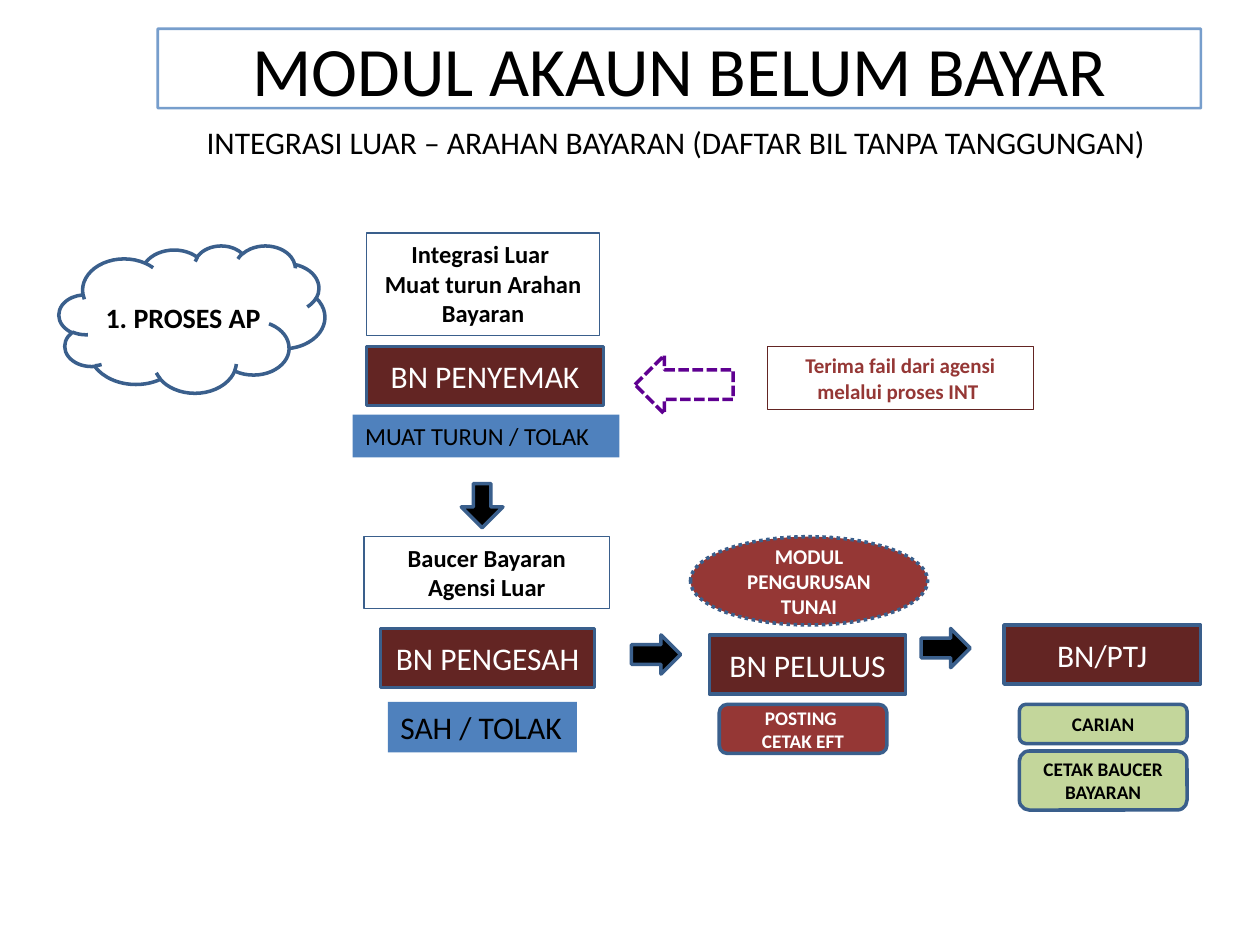
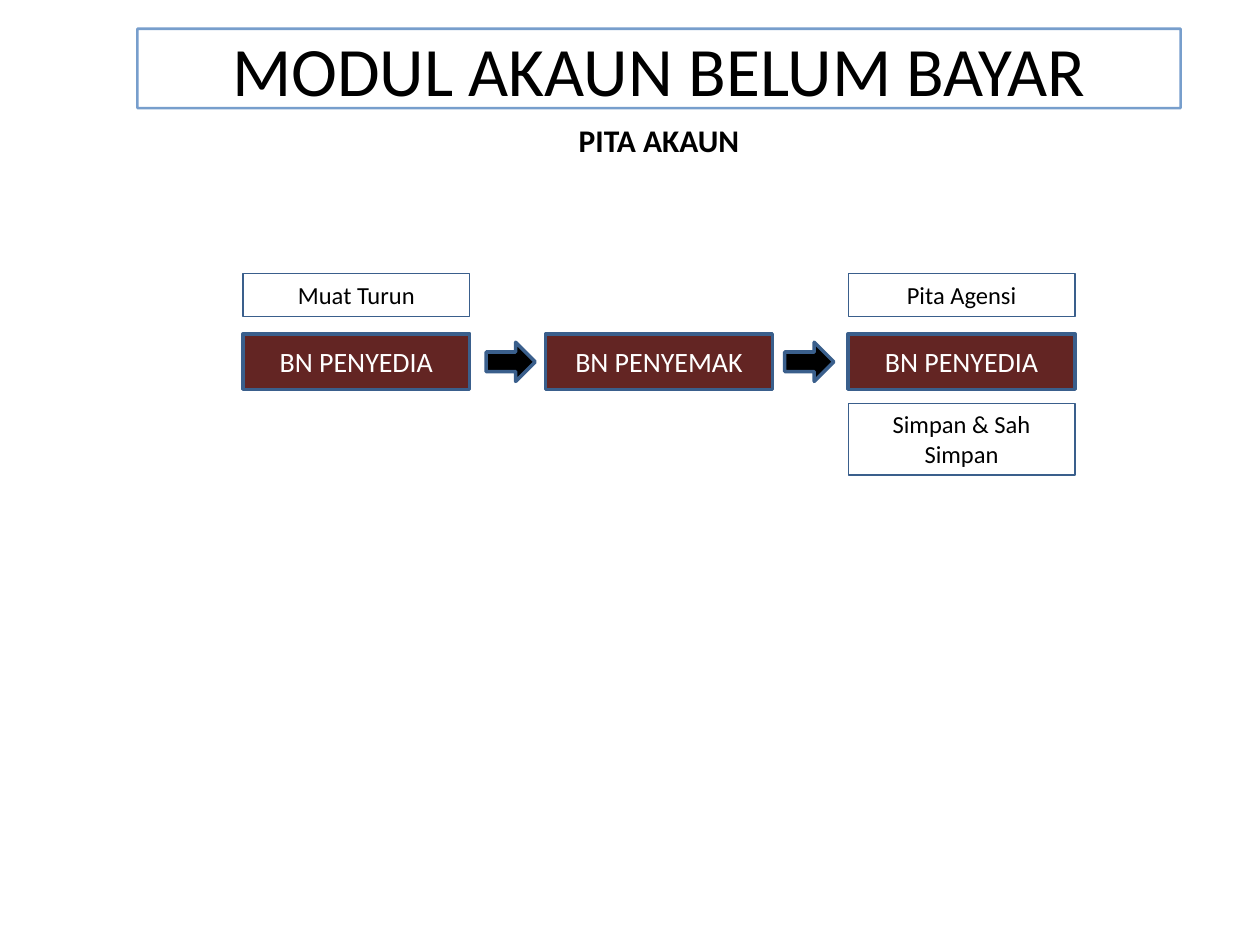
from lxml.etree import SubElement
from pptx import Presentation
from pptx.dml.color import RGBColor
from pptx.enum.dml import MSO_LINE_DASH_STYLE as Dash
from pptx.enum.shapes import MSO_AUTO_SHAPE_TYPE as Shape
from pptx.enum.text import MSO_ANCHOR as Anchor, MSO_AUTO_SIZE as AutoSize, PP_ALIGN as Align
from pptx.oxml.ns import qn
from pptx.util import Cm, Pt

FONT = "Calibri"
BLACK = RGBColor(0x00, 0x00, 0x00)
WHITE = RGBColor(0xFF, 0xFF, 0xFF)
BLUE = RGBColor(0x4F, 0x81, 0xBD)
OUTLINE = RGBColor(0x3A, 0x5F, 0x8C)
MAROON = RGBColor(0x63, 0x25, 0x23)
RED = RGBColor(0x95, 0x37, 0x35)
GREEN = RGBColor(0xC3, 0xD6, 0x9B)
PURPLE = RGBColor(0x5F, 0x00, 0x91)

TITLE = "MODUL AKAUN BELUM BAYAR"
TITLE_WIDTH = 21.03
ARROW_SIZE = (0.99, 0.79)


def write(shape, text, size=14, color=BLACK, bold=False, align=Align.CENTER,
          anchor=Anchor.MIDDLE, wrap=True):
    frame = shape.text_frame
    frame.text = text
    frame.auto_size = AutoSize.NONE
    frame.word_wrap = wrap
    frame.vertical_anchor = anchor
    for paragraph in frame.paragraphs:
        paragraph.alignment = align
        paragraph.space_before = Pt(0)
        font = paragraph.font
        font.name, font.size, font.bold = FONT, Pt(size), bold
        font.color.rgb = color


def place(shape, left, top, width, height):
    shape.left, shape.top = Cm(left), Cm(top)
    shape.width, shape.height = Cm(width), Cm(height)


def draw(slide, kind, box, fill=None, line=OUTLINE, line_width=2, dash=None):
    """Add a preset shape; fill or line may be None."""
    shape = slide.shapes.add_shape(kind, *map(Cm, box))
    shape.shadow.inherit = False
    if fill is None:
        shape.fill.background()
    else:
        shape.fill.solid()
        shape.fill.fore_color.rgb = fill
    if line is None:
        shape.line.fill.background()
    else:
        shape.line.color.rgb = line
        shape.line.width = Pt(line_width)
        if dash:
            shape.line.dash_style = dash
    return shape


def role(slide, box, text, size=18):
    write(draw(slide, Shape.RECTANGLE, box, MAROON), text, size=size, color=WHITE)


def label(slide, box, text, line=OUTLINE, **text_format):
    shape = draw(slide, Shape.RECTANGLE, box, line=line, line_width=0.75)
    write(shape, text, anchor=Anchor.TOP, **text_format)


def action(slide, box, text, size):
    shape = draw(slide, Shape.RECTANGLE, box, BLUE, line=None)
    write(shape, text, size=size, align=Align.LEFT, anchor=Anchor.TOP)


def button(slide, box, text, fill, color):
    shape = draw(slide, Shape.ROUNDED_RECTANGLE, box, fill)
    write(shape, text, size=11, color=color, bold=True)


def next_arrow(slide, left, top):
    draw(slide, Shape.RIGHT_ARROW, (left, top, *ARROW_SIZE), BLACK)


def add_titled_slide(presentation, title_left, subtitle, subtitle_box, **subtitle_format):
    slide = presentation.slides.add_slide(presentation.slide_layouts[0])
    title, body = slide.placeholders
    place(title, title_left, 0.58, TITLE_WIDTH, 1.6)
    write(title, TITLE, size=39.6)
    title.line.color.rgb = BLUE
    title.line.width = Pt(1.5)
    color = title.line.fill._xPr.find(".//" + qn("a:srgbClr"))
    SubElement(color, qn("a:alpha"), val="76000")
    place(body, *subtitle_box)
    write(body, subtitle, size=18, anchor=Anchor.TOP, **subtitle_format)
    return slide


def process_cloud(slide, left, top):
    draw(slide, Shape.CLOUD, (left, top, 5.36, 2.97))
    caption = slide.shapes.add_textbox(*map(Cm, (left + 0.69, top + 0.99, 3.68, 0.94)))
    write(caption, "1. PROSES AP", size=16, bold=True, align=Align.LEFT,
          anchor=Anchor.TOP, wrap=False)


def download_stage(slide, left, top):
    label(slide, (left + 0.28, top, 4.7, 2.06),
          "Integrasi Luar \nMuat turun Arahan Bayaran", bold=True)
    role(slide, (left + 0.28, top + 2.29, 4.78, 1.19), "BN PENYEMAK")
    action(slide, (left, top + 3.66, 5.38, 0.86), "MUAT TURUN / TOLAK", 14)


def agency_file(slide, left, top):
    draw(slide, Shape.LEFT_ARROW, (left, top + 0.17, 1.98, 1.19),
         line=PURPLE, dash=Dash.DASH).line.dash_style = Dash.SQUARE_DOT
    slide.shapes[-1].line._ln.find(qn("a:prstDash")).set("val", "sysDash")
    label(slide, (left + 2.67, top, 5.36, 1.27),
          "Terima fail dari agensi melalui proses INT ",
          line=MAROON, size=12, color=RED, bold=True)


def approval_stage(slide, left, top):
    label(slide, (left, top, 4.95, 1.45), "Baucer Bayaran Agensi Luar", bold=True)
    role(slide, (left + 0.33, top + 1.85, 4.32, 1.19), "BN PENGESAH")
    action(slide, (left + 0.48, top + 3.33, 3.81, 1.02), "SAH / TOLAK", 18)


def release_stage(slide, left, top):
    module = draw(slide, Shape.OVAL, (left, top, 4.78, 1.78), RED, dash=Dash.ROUND_DOT)
    write(module, "MODUL PENGURUSAN TUNAI", size=12, color=WHITE, bold=True)
    role(slide, (left + 0.38, top + 1.98, 3.96, 1.19), "BN PELULUS")
    button(slide, (left + 0.58, top + 3.38, 3.38, 0.99), "POSTING \nCETAK EFT", RED, WHITE)


def office_stage(slide, left, top):
    role(slide, (left, top, 3.96, 1.19), "BN/PTJ")
    for offset, height, text in ((1.6, 0.79, "CARIAN"),
                                 (2.54, 1.19, "CETAK BAUCER BAYARAN")):
        button(slide, (left + 0.31, top + offset, 3.38, height), text, GREEN, BLACK)


def build_payment_slide(presentation):
    slide = add_titled_slide(
        presentation, 3.18,
        "INTEGRASI LUAR – ARAHAN BAYARAN (DAFTAR BIL TANPA TANGGUNGAN)",
        (3.91, 2.36, 20.8, 1.02), align=Align.LEFT)
    process_cloud(slide, 1.19, 4.95)
    download_stage(slide, 7.11, 4.7)
    agency_file(slide, 12.8, 6.99)
    down = draw(slide, Shape.DOWN_ARROW, (9.3, 9.75, 0.84, 0.89), BLACK)
    down.adjustments[0] = 0.42
    approval_stage(slide, 7.34, 10.82)
    next_arrow(slide, 12.73, 12.8)
    release_stage(slide, 13.92, 10.82)
    next_arrow(slide, 18.57, 12.67)
    office_stage(slide, 20.24, 12.6)


def tape_flow(slide, left, top):
    """Three roles in a row, with labels above and below."""
    width, pitch = 4.57, 6.1
    steps = (("BN PENYEDIA", "Muat Turun", None),
             ("BN PENYEMAK", None, None),
             ("BN PENYEDIA", "Pita Agensi", "Simpan & Sah Simpan"))
    for index, (name, above, below) in enumerate(steps):
        x = left + index * pitch
        role(slide, (x, top, width, 1.12), name, size=16)
        if above:
            label(slide, (x, top - 1.21, width, 0.86), above)
        if below:
            label(slide, (x, top + 1.4, width, 1.45), below)
    for offset in (4.9, 10.92):
        next_arrow(slide, left + offset, top + 0.17)


def build_tape_slide(presentation):
    slide = add_titled_slide(presentation, 2.77, "PITA AKAUN",
                             (2.77, 2.31, TITLE_WIDTH, 1.02), bold=True)
    tape_flow(slide, 4.9, 6.73)


def main():
    presentation = Presentation()
    presentation.slide_width, presentation.slide_height = Cm(25.4), Cm(19.05)
    build_payment_slide(presentation)
    build_tape_slide(presentation)
    presentation.save("out.pptx")


if __name__ == "__main__":
    main()
